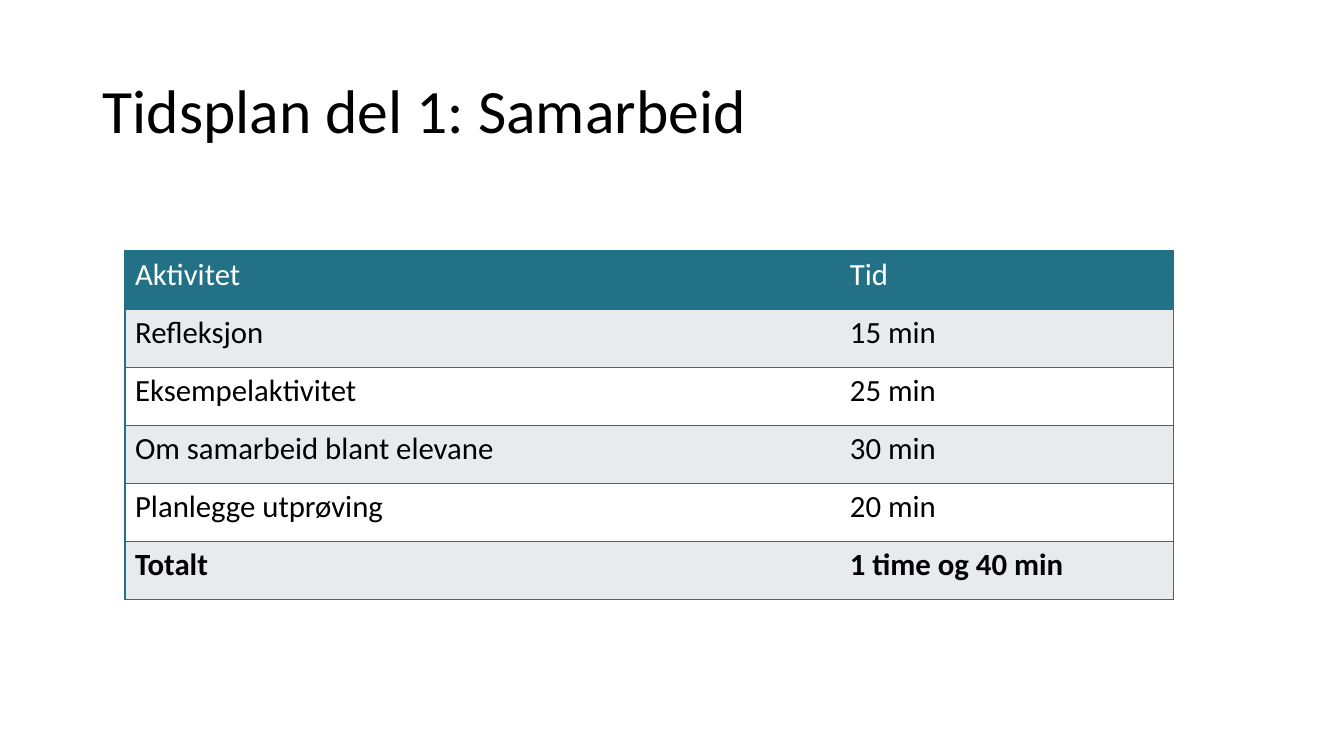
from dataclasses import dataclass

from lxml.etree import SubElement
from pptx import Presentation
from pptx.dml.color import RGBColor
from pptx.enum.text import MSO_ANCHOR, PP_ALIGN
from pptx.oxml.ns import qn
from pptx.util import Inches, Pt


@dataclass(frozen=True)
class Theme:
    font: str = "Calibri"
    teal: str = "227186"
    band: str = "E8EBED"
    white: str = "FFFFFF"
    black: str = "000000"
    title_size: int = 44
    table_size: int = 22
    border_width: int = 1


theme = Theme()


def add_text(para, text, size, color, bold=False):
    span = para.add_run()
    span.text = text
    span.font.name = theme.font
    span.font.size = Pt(size)
    span.font.bold = bold
    span.font.color.rgb = RGBColor.from_string(color)


def add_border(cell, side, visible):
    properties = cell._tc.get_or_add_tcPr()
    line = SubElement(properties, qn(f"a:ln{side}"), w=str(Pt(theme.border_width)))
    if visible:
        fill = SubElement(line, qn("a:solidFill"))
        SubElement(fill, qn("a:srgbClr"), val=theme.teal)
    else:
        SubElement(line, qn("a:noFill"))


deck = Presentation()
deck.slide_width = Inches(13.33)
deck.slide_height = Inches(7.5)
page = deck.slides.add_slide(deck.slide_layouts[5])

title = page.shapes.title
title.left, title.top = Inches(0.92), Inches(0.4)
title.width, title.height = Inches(11.5), Inches(1.45)
title.text_frame.vertical_anchor = MSO_ANCHOR.MIDDLE
title.text_frame.word_wrap = True
para = title.text_frame.paragraphs[0]
para.alignment = PP_ALIGN.LEFT
para.line_spacing = 0.9
add_text(para, "Tidsplan del 1: Samarbeid", theme.title_size, theme.black)

schedule = [
    ("Aktivitet", "Tid"),
    ("Refleksjon", "15 min"),
    ("Eksempelaktivitet", "25 min"),
    ("Om samarbeid blant elevane", "30 min"),
    ("Planlegge utprøving", "20 min"),
    ("Totalt", "1 time og 40 min"),
]
column_widths = [7.09, 3.31]
last_row = len(schedule) - 1
last_column = len(column_widths) - 1

table = page.shapes.add_table(
    len(schedule), len(column_widths),
    Inches(1.24), Inches(2.49), Inches(10.39), Inches(3.46),
).table
table.horz_banding = False
for column, width in zip(table.columns, column_widths):
    column.width = Inches(width)

for row_index, entries in enumerate(schedule):
    is_header = row_index == 0
    if is_header:
        fill_color = theme.teal
    else:
        fill_color = theme.band if row_index % 2 else theme.white
    for column_index, text in enumerate(entries):
        cell = table.cell(row_index, column_index)
        add_border(cell, "L", column_index == 0)
        add_border(cell, "R", column_index == last_column)
        add_border(cell, "T", True)
        add_border(cell, "B", True)
        cell.fill.solid()
        cell.fill.fore_color.rgb = RGBColor.from_string(fill_color)
        add_text(
            cell.text_frame.paragraphs[0], text, theme.table_size,
            theme.white if is_header else theme.black,
            bold=row_index == last_row,
        )

deck.save("out.pptx")
